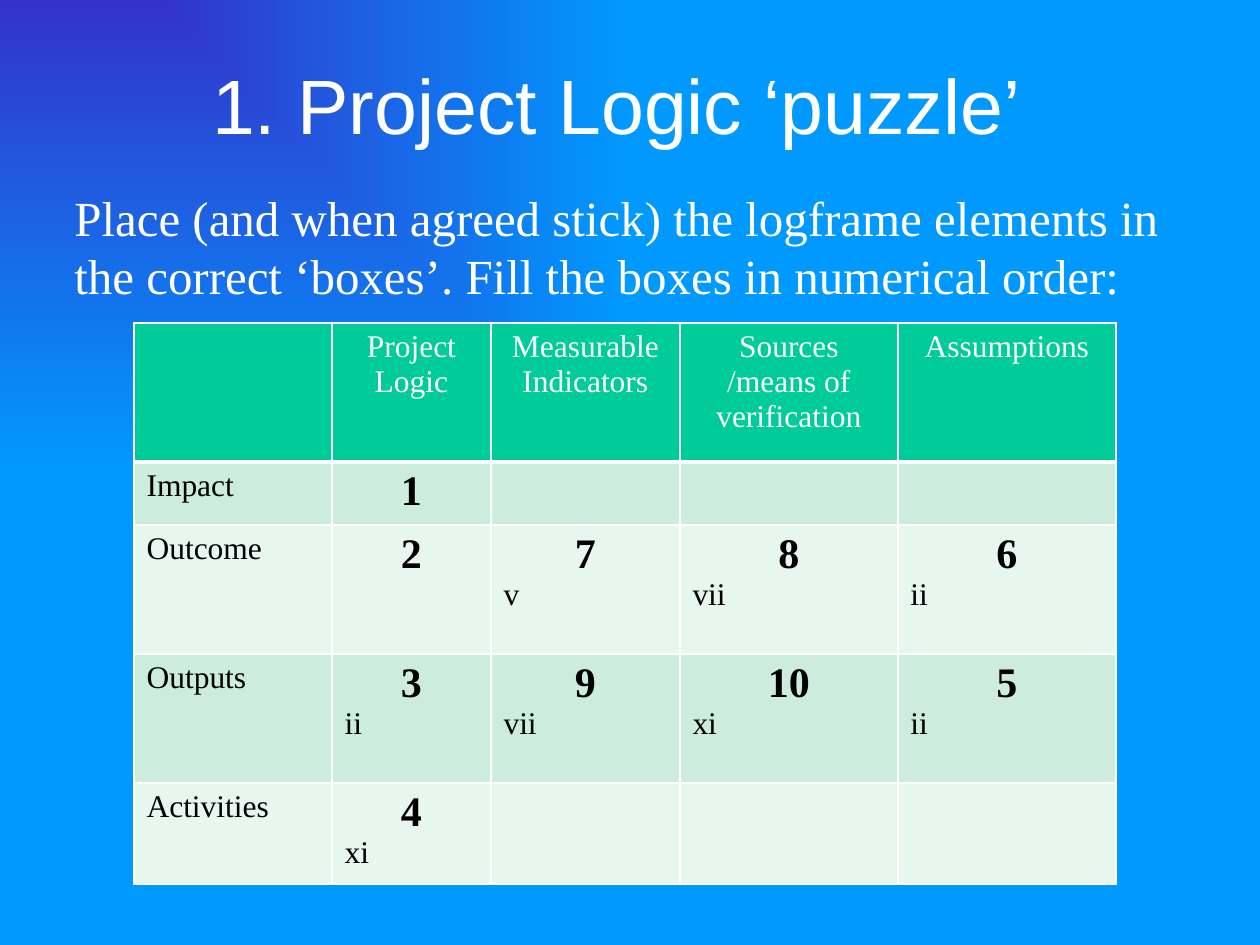
from pptx import Presentation
from pptx.dml.color import RGBColor
from pptx.enum.text import MSO_ANCHOR, PP_ALIGN
from pptx.oxml import parse_xml
from pptx.oxml.ns import nsdecls, qn
from pptx.util import Pt

PX = 914400 // 126
HUES = {
    "deep": "3333CC", "sky": "0099FF", "white": "FFFFFF", "black": "000000",
    "green": "00CC99", "mint": "CCECDE", "pale": "E7F6EF",
}
SERIF = "Times New Roman"
COLS = [198, 159, 189, 218, 218]
ROWS = [139, 59, 129, 129, 94]
HEADS = ["", "Project Logic", "Measurable Indicators",
         "Sources /means of verification", "Assumptions"]
# Each cell after the label holds its order number and a count
BODY = [
    ["Impact", "1", "", "", ""],
    ["Outcome", "2", "7\nv", "8\nvii", "6\nii"],
    ["Outputs", "3\nii", "9\nvii", "10\nxi", "5\nii"],
    ["Activities", "4\nxi", "", "", ""],
]


def px(*nums):
    return [n * PX for n in nums]


def rgb(name):
    return RGBColor.from_string(HUES[name])


def style(para, size, hue, face=SERIF, bold=False, align=PP_ALIGN.LEFT):
    para.alignment = align
    font = para.font if not para.runs else para.runs[0].font
    font.name, font.size, font.bold = face, Pt(size), bold
    font.color.rgb = rgb(hue)


def add_back(slide):
    fill = slide.background.fill
    fill.gradient()
    for stop, place, hue in zip(fill.gradient_stops, (0, 1), ("deep", "sky")):
        stop.position = place
        stop.color.rgb = rgb(hue)
    # Spread the gradient from the top left corner
    line = next(slide.element.iter(qn("a:lin")))
    line.getparent().replace(line, parse_xml(
        f'<a:path {nsdecls("a")} path="rect">'
        '<a:fillToRect r="100000" b="100000"/></a:path>'))


def add_title(slide, box, text):
    title = slide.shapes.title
    title.left, title.top, title.width, title.height = px(*box)
    frame = title.text_frame
    frame.text = text
    frame.vertical_anchor = MSO_ANCHOR.TOP
    frame.margin_top = 0
    style(frame.paragraphs[0], 44, "white", "Arial", align=PP_ALIGN.CENTER)


def add_task(slide, box, text):
    frame = slide.shapes.add_textbox(*px(*box)).text_frame
    frame.word_wrap = True
    frame.margin_top = 12 * PX
    frame.text = text
    style(frame.paragraphs[0], 28, "white")


def edge(cell, base):
    props = cell._tc.get_or_add_tcPr()
    for spot, side in enumerate("LRTB"):
        width = Pt(base if side == "B" else 1)
        props.insert(spot, parse_xml(
            f'<a:ln{side} {nsdecls("a")} w="{width}"><a:solidFill>'
            f'<a:srgbClr val="{HUES["white"]}"/></a:solidFill></a:ln{side}>'))


def fill_cell(cell, text, row, col):
    head = row == 0
    cell.fill.solid()
    cell.fill.fore_color.rgb = rgb(
        "green" if head else "mint" if row % 2 else "pale")
    edge(cell, 3 if head else 1)
    cell.text = text
    for num, para in enumerate(cell.text_frame.paragraphs):
        order = not head and col > 0 and num == 0 and text != ""
        style(para, 24 if order else 18, "white" if head else "black",
              bold=order,
              align=PP_ALIGN.CENTER if head or order else PP_ALIGN.LEFT)


def add_grid(slide, left, top):
    table = slide.shapes.add_table(
        len(ROWS), len(COLS), *px(left, top, sum(COLS), sum(ROWS))).table
    table.first_row = table.horz_banding = False
    for col, width in zip(table.columns, COLS):
        col.width = width * PX
    for row, height in zip(table.rows, ROWS):
        row.height = height * PX
    for r, line in enumerate([HEADS] + BODY):
        for c, text in enumerate(line):
            fill_cell(table.cell(r, c), text, r, c)


def main():
    deck = Presentation()
    deck.slide_width, deck.slide_height = px(1260, 945)
    slide = deck.slides.add_slide(deck.slide_layouts[5])
    add_back(slide)
    add_title(slide, (54, 58, 1126, 158), "1. Project Logic ‘puzzle’")
    add_task(slide, (62, 175, 1126, 725),
             "Place (and when agreed stick) the logframe elements in the "
             "correct ‘boxes’. Fill the boxes in numerical order:")
    add_grid(slide, 134, 323)
    deck.save("out.pptx")


if __name__ == "__main__":
    main()
